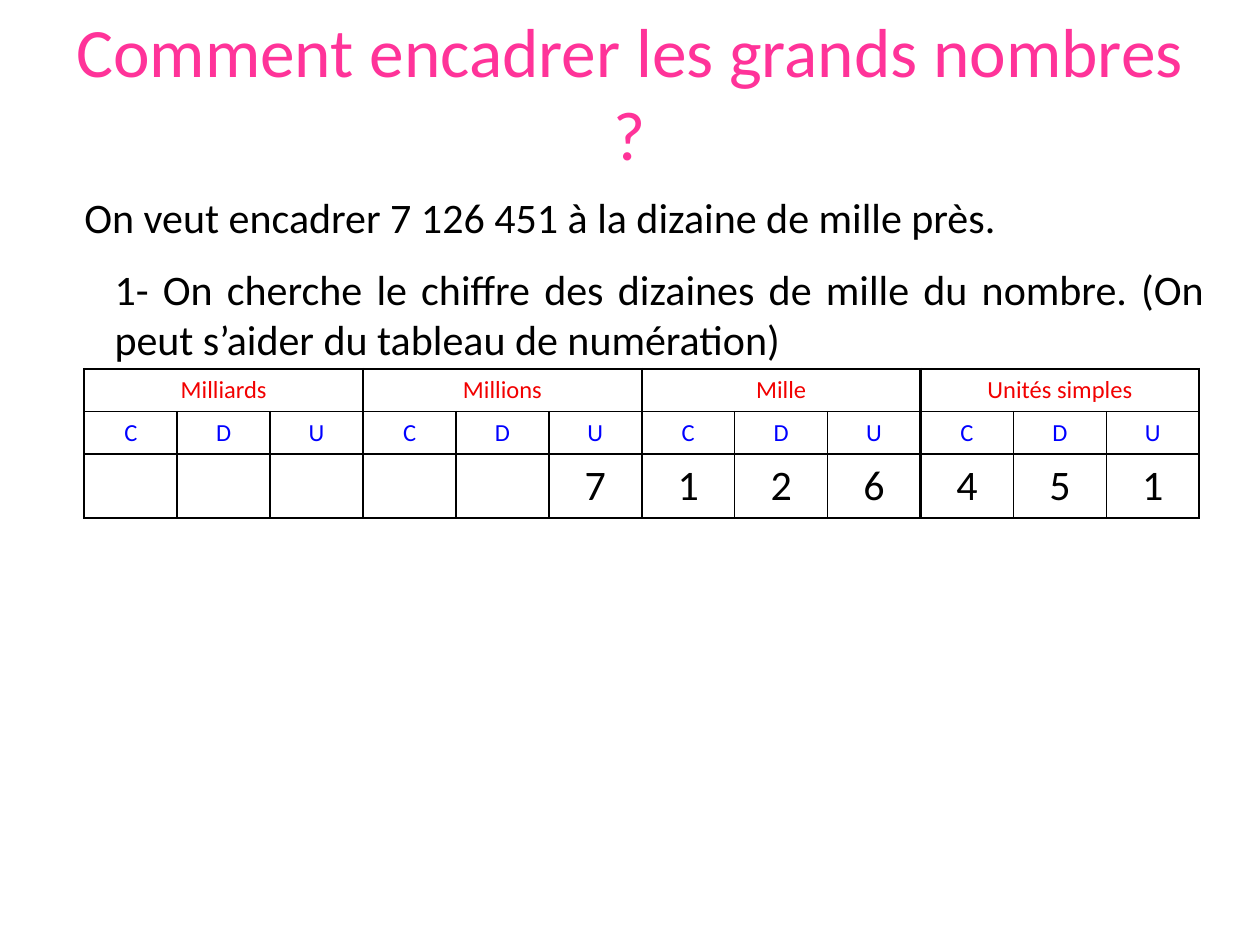
from lxml.etree import SubElement
from pptx import Presentation
from pptx.dml.color import RGBColor
from pptx.enum.text import MSO_ANCHOR, MSO_AUTO_SIZE, PP_ALIGN
from pptx.oxml.ns import qn
from pptx.util import Cm, Pt

# Content
TITLE = "Comment encadrer les grands nombres ?"
STATEMENTS = [
    # text, left, top, width, height (cm), alignment
    ("On veut encadrer 7 126 451 à la dizaine de mille près.",
     1.45, 3.73, 22.48, 1.28, PP_ALIGN.LEFT),
    ("1- On cherche le chiffre des dizaines de mille du nombre. "
     "(On peut s’aider du tableau de numération)",
     2.06, 5.18, 22.48, 2.31, PP_ALIGN.JUSTIFY),
]
CLASSES = ["Milliards", "Millions", "Mille", "Unités simples"]
RANKS = ["C", "D", "U"]
NUMBER = "7126451"

# Formats
TITLE_FORMAT = {"name": "Calibri", "size": Pt(39.6), "color": "FF3399"}
BODY_FORMAT = {"name": "Calibri", "size": Pt(24), "color": "000000"}
CLASS_FORMAT = {"name": "Calibri", "size": Pt(14), "color": "F20000"}
RANK_FORMAT = {**CLASS_FORMAT, "color": "0000FF"}

# Table geometry (cm)
TABLE_LEFT, TABLE_TOP, TABLE_WIDTH = 1.7, 7.44, 22.48
ROW_HEIGHTS = [0.85, 0.85, 1.28]
THICK, THIN = 1.5, 1


def colour(hex_code):
    return RGBColor.from_string(hex_code)


def write(frame, text, values, alignment):
    para = frame.paragraphs[0]
    para.alignment = alignment
    if not text:
        return
    span = para.add_run()
    span.text = text
    for name, value in values.items():
        if name == "color":
            span.font.color.rgb = colour(value)
        else:
            setattr(span.font, name, value)


def draw_borders(cell, widths):
    properties = cell._tc.get_or_add_tcPr()
    for side, width in widths.items():
        line = SubElement(properties, qn(f"a:ln{side}"), w=str(Pt(width)))
        fill = SubElement(line, qn("a:solidFill"))
        SubElement(fill, qn("a:srgbClr"), val="000000")


def add_title(page):
    title = page.shapes.title
    title.left, title.top, title.width, title.height = map(Cm, (1.27, 0.76, 22.86, 2.16))
    frame = title.text_frame
    frame.word_wrap = True
    frame.auto_size = MSO_AUTO_SIZE.NONE
    frame.vertical_anchor = MSO_ANCHOR.MIDDLE
    write(frame, TITLE, TITLE_FORMAT, PP_ALIGN.CENTER)


def add_statement(page, text, left, top, width, height, alignment):
    box = page.shapes.add_textbox(Cm(left), Cm(top), Cm(width), Cm(height))
    box.text_frame.word_wrap = True
    box.text_frame.auto_size = MSO_AUTO_SIZE.SHAPE_TO_FIT_TEXT
    write(box.text_frame, text, BODY_FORMAT, alignment)


def add_place_value_table(page):
    group = len(RANKS)
    columns = group * len(CLASSES)
    class_row = [CLASSES[i // group] if i % group == 0 else "" for i in range(columns)]
    digit_row = list(NUMBER.rjust(columns))
    rows = [
        (class_row, CLASS_FORMAT, MSO_ANCHOR.TOP),
        (RANKS * len(CLASSES), RANK_FORMAT, MSO_ANCHOR.MIDDLE),
        (digit_row, BODY_FORMAT, MSO_ANCHOR.MIDDLE),
    ]
    table = page.shapes.add_table(
        len(rows), columns, Cm(TABLE_LEFT), Cm(TABLE_TOP),
        Cm(TABLE_WIDTH), Cm(sum(ROW_HEIGHTS))).table
    table.first_row = table.horz_banding = False
    for column in table.columns:
        column.width = Cm(TABLE_WIDTH / columns)

    for r, (texts, values, anchor) in enumerate(rows):
        table.rows[r].height = Cm(ROW_HEIGHTS[r])
        for c, text in enumerate(texts):
            cell = table.cell(r, c)
            draw_borders(cell, {
                "L": THICK if c % group == 0 else THIN,
                "R": THICK if r == 0 or c % group == group - 1 else THIN,
                "T": THICK if r == 0 else THIN,
                "B": THICK if r == len(rows) - 1 else THIN,
            })
            cell.fill.background()
            cell.vertical_anchor = anchor
            write(cell.text_frame, text.strip(), values, PP_ALIGN.CENTER)

    # Each class heading spans its three ranks
    for c in range(0, columns, group):
        table.cell(0, c).merge(table.cell(0, c + group - 1))


def main():
    deck = Presentation()
    deck.slide_width, deck.slide_height = Cm(25.4), Cm(19.05)
    page = deck.slides.add_slide(deck.slide_layouts[5])
    add_title(page)
    add_place_value_table(page)
    for statement in STATEMENTS:
        add_statement(page, *statement)
    deck.save("out.pptx")


if __name__ == "__main__":
    main()
